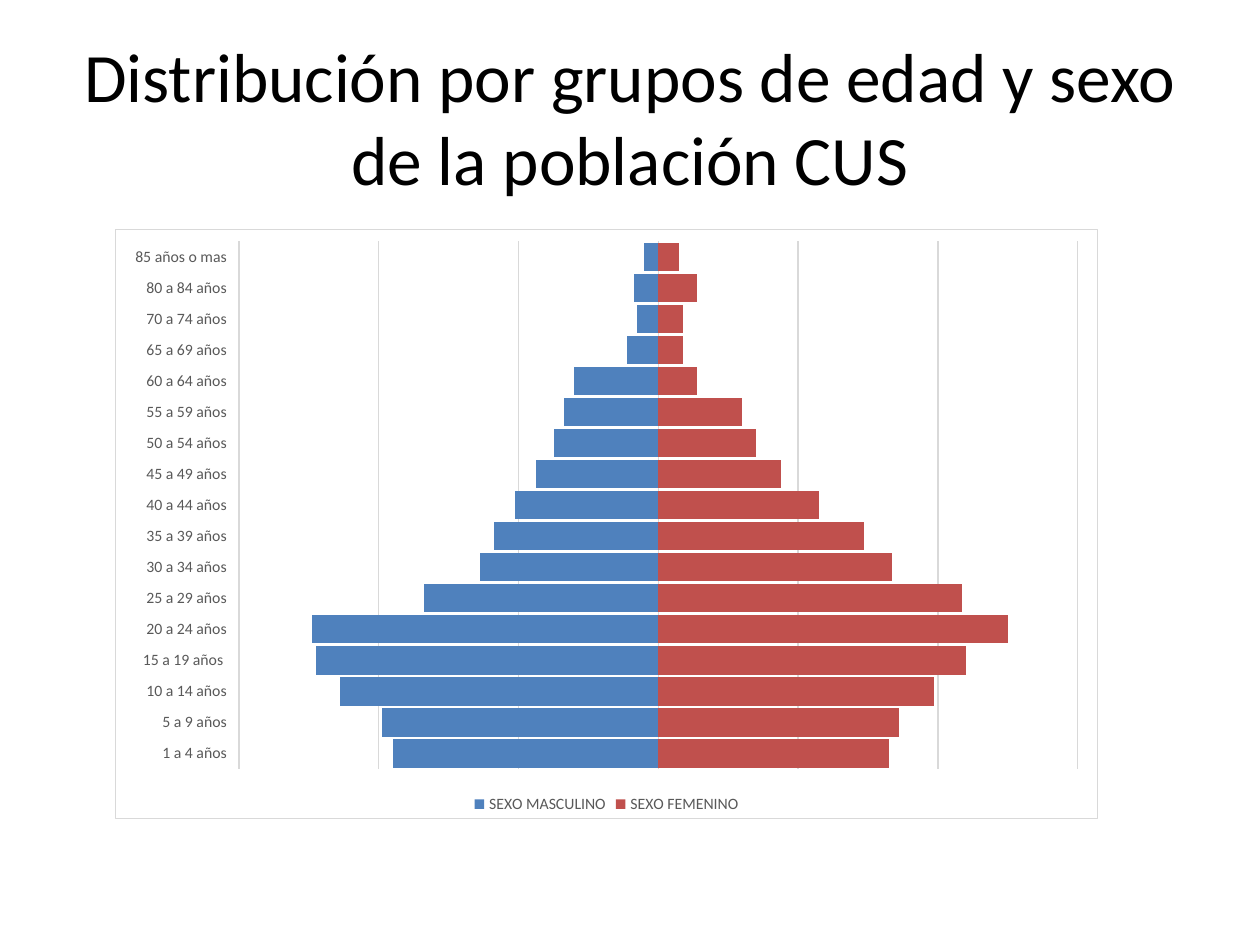
from lxml.etree import fromstring
from pptx import Presentation
from pptx.chart.data import CategoryChartData
from pptx.dml.color import RGBColor
from pptx.enum.chart import XL_CHART_TYPE, XL_LEGEND_POSITION, XL_TICK_LABEL_POSITION, XL_TICK_MARK
from pptx.enum.text import MSO_ANCHOR, PP_ALIGN
from pptx.util import Emu, Pt

PX = 914400 / 126
FONT = "Calibri"
GRAY = "D9D9D9"
TEXT_GRAY = "595959"

AGE_GROUPS = [
    "1 a 4 años", "5 a 9 años", "10 a 14 años", "15 a 19 años ", "20 a 24 años", "25 a 29 años",
    "30 a 34 años", "35 a 39 años", "40 a 44 años", "45 a 49 años", "50 a 54 años", "55 a 59 años",
    "60 a 64 años", "65 a 69 años", "70 a 74 años", "80 a 84 años", "85 años o mas",
]
SEXES = [
    ("SEXO MASCULINO", "4F81BD",
     [-76, -79, -91, -98, -99, -67, -51, -47, -41, -35, -30, -27, -24, -9, -6, -7, -4]),
    ("SEXO FEMENINO", "C0504D",
     [66, 69, 79, 88, 100, 87, 67, 59, 46, 35, 28, 24, 11, 7, 7, 11, 6]),
]
BORDER_XML = f"""<c:spPr xmlns:c="http://schemas.openxmlformats.org/drawingml/2006/chart"
    xmlns:a="http://schemas.openxmlformats.org/drawingml/2006/main">
  <a:solidFill><a:srgbClr val="FFFFFF"/></a:solidFill>
  <a:ln w="9525"><a:solidFill><a:srgbClr val="{GRAY}"/></a:solidFill></a:ln>
</c:spPr>"""


def px(length):
    return Emu(round(length * PX))


def color(value):
    return RGBColor.from_string(value)


def set_values(target, values):
    for name, value in values.items():
        setattr(target, name, value)


def set_font(font, size, hex_color):
    set_values(font, {"name": FONT, "size": Pt(size), "bold": False})
    font.color.rgb = color(hex_color)


def set_line(line):
    line.width = Pt(0.75)
    line.color.rgb = color(GRAY)


def add_title(slide, box, text):
    frame = slide.shapes.add_textbox(*map(px, box)).text_frame
    set_values(frame, {"word_wrap": True, "vertical_anchor": MSO_ANCHOR.MIDDLE})
    para = frame.paragraphs[0]
    para.alignment = PP_ALIGN.CENTER
    span = para.add_run()
    span.text = text
    set_font(span.font, 39.6, "000000")


def style_axes(chart):
    ages = chart.category_axis
    set_values(ages, {
        "tick_label_position": XL_TICK_LABEL_POSITION.LOW,
        "major_tick_mark": XL_TICK_MARK.NONE,
        "minor_tick_mark": XL_TICK_MARK.NONE,
        "has_major_gridlines": False,
    })
    set_font(ages.tick_labels.font, 9, TEXT_GRAY)
    set_line(ages.format.line)
    counts = chart.value_axis
    set_values(counts, {
        "visible": False,
        "minimum_scale": -120,
        "maximum_scale": 120,
        "major_unit": 40,
        "has_major_gridlines": True,
    })
    set_line(counts.major_gridlines.format.line)


def add_pyramid(slide, box):
    """Stacked bars with men left of zero and women right of it."""
    data = CategoryChartData()
    data.categories = AGE_GROUPS
    for name, _, values in SEXES:
        data.add_series(name, values)
    chart = slide.shapes.add_chart(XL_CHART_TYPE.BAR_STACKED, *map(px, box), data).chart
    set_values(chart, {"has_title": False, "has_legend": True})
    set_font(chart.font, 10, "000000")
    style_axes(chart)

    plot = chart.plots[0]
    set_values(plot, {"gap_width": 10, "overlap": 100, "vary_by_categories": False})
    for series, (_, fill_color, _) in zip(plot.series, SEXES):
        series.invert_if_negative = False
        series.format.fill.solid()
        series.format.fill.fore_color.rgb = color(fill_color)

    set_values(chart.legend, {"position": XL_LEGEND_POSITION.BOTTOM, "include_in_layout": False})
    set_font(chart.legend.font, 9, TEXT_GRAY)
    chart.element.chart.addnext(fromstring(BORDER_XML))


def main():
    deck = Presentation()
    set_values(deck, {"slide_width": px(1260), "slide_height": px(945)})
    slide = deck.slides.add_slide(deck.slide_layouts[6])
    add_title(slide, (63, 38, 1134, 157), "Distribución por grupos de edad y sexo de la población CUS")
    add_pyramid(slide, (115, 229, 983, 590))
    deck.save("out.pptx")


if __name__ == "__main__":
    main()
